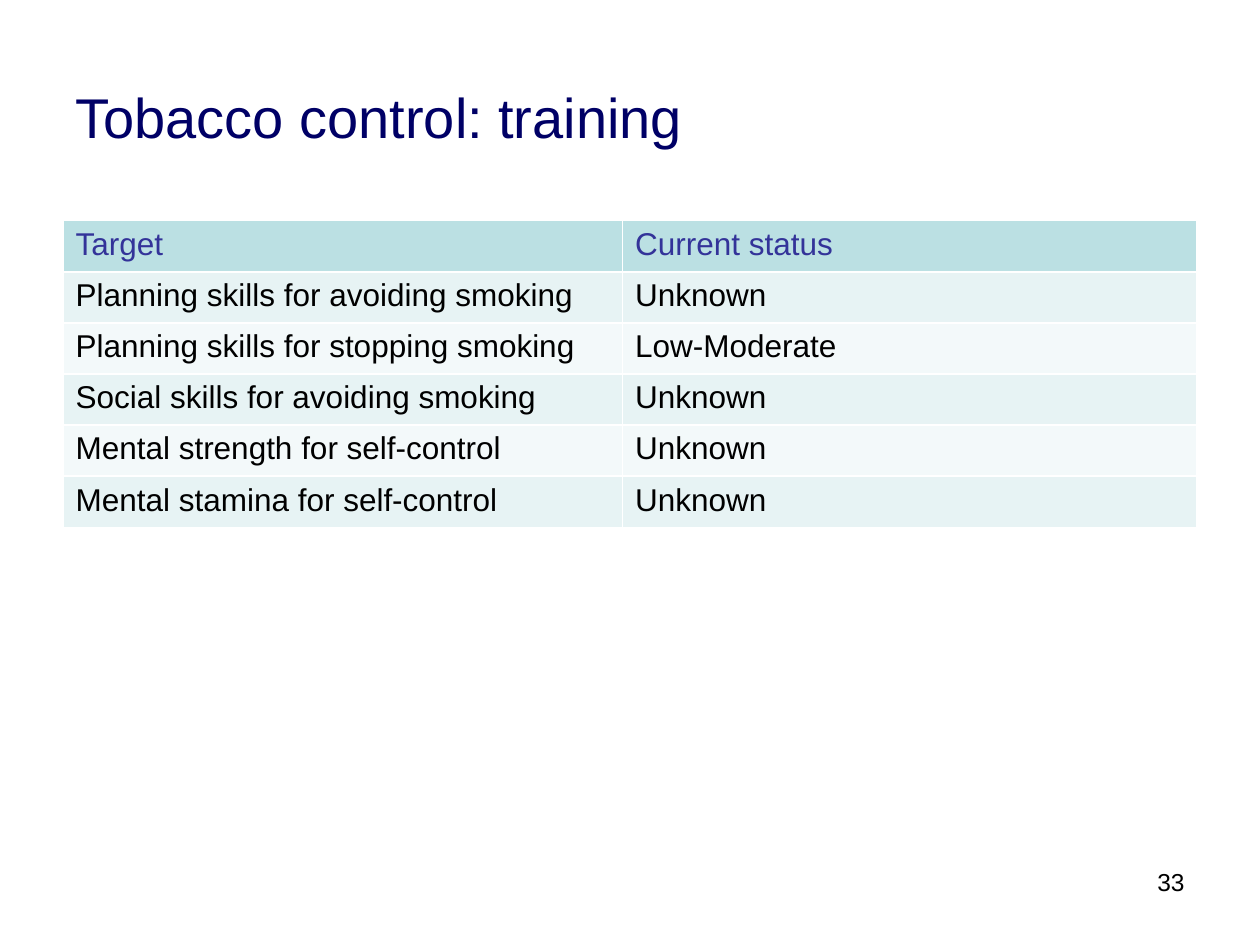
"""Build the slide on training targets for tobacco control."""
from pptx import Presentation
from pptx.dml.color import RGBColor
from pptx.enum.text import MSO_ANCHOR, PP_ALIGN
from pptx.util import Cm, Pt

LEFT, RIGHT = PP_ALIGN.LEFT, PP_ALIGN.RIGHT
TOP, MIDDLE = MSO_ANCHOR.TOP, MSO_ANCHOR.MIDDLE

ROWS = [
    ("Target", "Current status"),
    ("Planning skills for avoiding smoking", "Unknown"),
    ("Planning skills for stopping smoking", "Low-Moderate"),
    ("Social skills for avoiding smoking", "Unknown"),
    ("Mental strength for self-control", "Unknown"),
    ("Mental stamina for self-control", "Unknown"),
]
LABELS = [
    ("Tobacco control: training", (1.27, 0.76, 22.78, 3.18), "title", LEFT, MIDDLE),
    ("33", (17.09, 17.35, 7.04, 1.32), "page", RIGHT, TOP),
]
COLORS = {
    "title": "000066", "page": "000000", "head": "333399", "body": "000000",
    "top": "BBE0E3", "odd": "E7F3F4", "even": "F3F9FA",
}
SIZES = {"title": 32, "page": 14, "head": 18, "body": 18}
WIDTHS = (11.28, 11.58)
HEIGHT = 1.03


def color(key):
    return RGBColor.from_string(COLORS[key])


def write(frame, text, role, align=LEFT):
    para = frame.paragraphs[0]
    para.alignment = align
    run = para.add_run()
    run.text = text
    style = {"name": "Arial", "size": Pt(SIZES[role]), "bold": False}
    for key, value in style.items():
        setattr(run.font, key, value)
    run.font.color.rgb = color(role)


def add_label(slide, text, box, role, align, anchor):
    frame = slide.shapes.add_textbox(*map(Cm, box)).text_frame
    for key, value in {"word_wrap": True, "vertical_anchor": anchor}.items():
        setattr(frame, key, value)
    write(frame, text, role, align)


def add_grid(slide):
    size = (1.27, 4.45, sum(WIDTHS), HEIGHT * len(ROWS))
    table = slide.shapes.add_table(len(ROWS), len(WIDTHS), *map(Cm, size)).table
    for col, width in zip(table.columns, WIDTHS):
        col.width = Cm(width)
    for i, row in enumerate(ROWS):
        table.rows[i].height = Cm(HEIGHT)
        band = ("odd" if i % 2 else "even") if i else "top"
        for j, text in enumerate(row):
            cell = table.cell(i, j)
            cell.fill.solid()
            cell.fill.fore_color.rgb = color(band)
            write(cell.text_frame, text, "body" if i else "head")


def main():
    deck = Presentation()
    deck.slide_width, deck.slide_height = Cm(25.4), Cm(19.05)
    slide = deck.slides.add_slide(deck.slide_layouts[6])
    for label in LABELS:
        add_label(slide, *label)
    add_grid(slide)
    deck.save("out.pptx")


if __name__ == "__main__":
    main()
